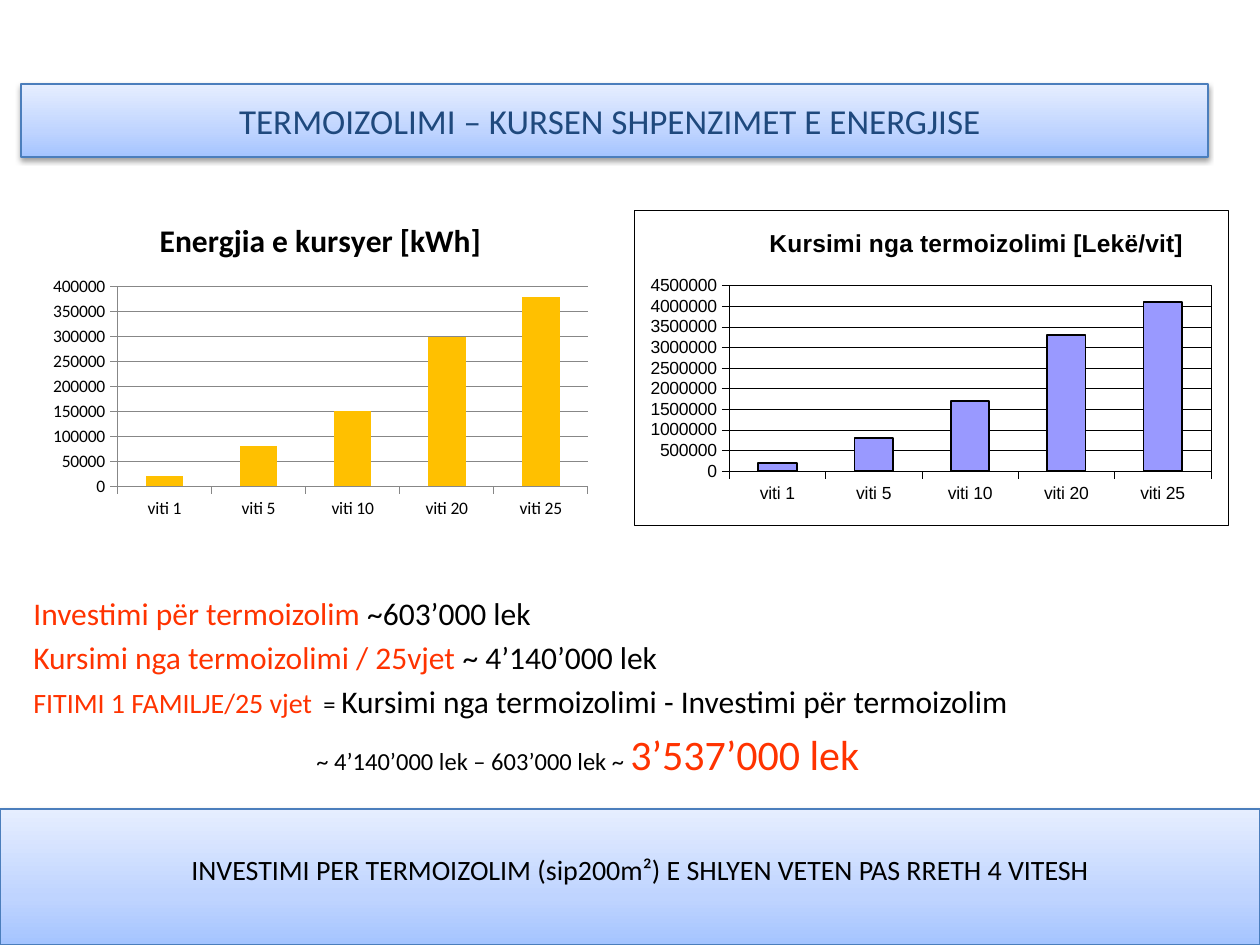
from lxml import etree
from pptx import Presentation
from pptx.chart.data import CategoryChartData
from pptx.dml.color import RGBColor
from pptx.enum.chart import XL_CHART_TYPE as CT, XL_TICK_MARK as TICK
from pptx.enum.shapes import MSO_SHAPE as SHAPE
from pptx.enum.text import MSO_ANCHOR as ANCHOR, PP_ALIGN as ALIGN
from pptx.oxml import parse_xml
from pptx.oxml.ns import nsdecls, qn
from pptx.util import Pt

PX = 914400 // 126
BLACK = RGBColor(0x00, 0x00, 0x00)
WHITE = RGBColor(0xFF, 0xFF, 0xFF)
RED = RGBColor(0xFF, 0x33, 0x00)
NAVY = RGBColor(0x1F, 0x49, 0x7D)
BLUE = RGBColor(0x4B, 0x7E, 0xBC)
GREY = RGBColor(0x87, 0x87, 0x87)
AMBER = RGBColor(0xFF, 0xC0, 0x00)
LILAC = RGBColor(0x99, 0x99, 0xFF)
STOPS = [(0, RGBColor(0xA4, 0xC4, 0xFF)), (35, RGBColor(0xBF, 0xD4, 0xFF)),
         (100, RGBColor(0xE6, 0xEE, 0xFF))]

BANNERS = [
    dict(text="TERMOIZOLIMI – KURSEN SHPENZIMET E ENERGJISE", box=(21, 84, 1187, 73),
         size=20, color=NAVY, anchor=ANCHOR.MIDDLE, margins=dict(margin_right=21)),
    dict(text="INVESTIMI PER TERMOIZOLIM (sip200m²) E SHLYEN VETEN PAS RRETH 4 VITESH",
         box=(0, 809, 1260, 136), size=16, color=BLACK, anchor=ANCHOR.TOP,
         margins=dict(margin_left=33, margin_top=44)),
]
SUMMARY_BOX = (21, 588, 1218, 199)
SUMMARY = [
    (0, 0, [("Investimi për termoizolim", 18, RED), (" ~603’000 lek", 18, BLACK)]),
    (0, 3.6, [("Kursimi nga termoizolimi / 25vjet ", 18, RED), ("~ 4’140’000 lek", 18, BLACK)]),
    (0, 3.6, [("FITIMI 1 FAMILJE/25 vjet", 16, RED), (" ", 14, RED), (" = ", 14, BLACK),
              ("Kursimi nga termoizolimi - Investimi për termoizolim", 18, BLACK)]),
    (283, 4.8, [("~ 4’140’000 lek – 603’000 lek ~ ", 14, BLACK), ("3’537’000 lek", 24, RED)]),
]
YEARS = [f"viti {n}" for n in (1, 5, 10, 20, 25)]
CHARTS = [
    dict(title="Energjia e kursyer [kWh]", series="Energjia e kursyer [kWh]",
         box=(42, 200, 557, 325), values=(20000, 80000, 150000, 300000, 380000),
         font="Calibri", title_size=18, color=AMBER, outline=None,
         axis=(GREY, 0.75), framed=False),
    dict(title="Kursimi nga termoizolimi [Lekë/vit]", series="Series 1",
         box=(634, 210, 595, 315), values=(200000, 800000, 1700000, 3300000, 4100000),
         font="Arial", title_size=14, color=LILAC, outline=(BLACK, 1),
         axis=(BLACK, 0.25), framed=True),
]
TITLE_SPOT = dict(x=0.22, y=0.04)
PLOT_SPOT = dict(x=0.16, y=0.24, w=0.81, h=0.59)


def emu(box):
    """Turn px lengths into EMU."""
    return [v * PX for v in box]


def style(font, **values):
    """Set font attributes and colour."""
    font.color.rgb = values.pop("color")
    for name, value in values.items():
        setattr(font, name, value)


def set_line(line, color, width):
    """Give a line its colour and width in points."""
    line.color.rgb = color
    line.width = Pt(width)


def add_banner(shapes, text, box, size, color, anchor, margins):
    """Add a gradient bar with a soft shadow and centred text."""
    s = shapes.add_shape(SHAPE.RECTANGLE, *emu(box))
    s.shadow.inherit = False
    set_line(s.line, BLUE, 0.75)
    stops = "".join(f'<a:gs pos="{pos * 1000}"><a:srgbClr val="{c}"/></a:gs>' for pos, c in STOPS)
    pr = s._element.spPr
    pr.find(qn("a:prstGeom")).addnext(parse_xml(
        f'<a:gradFill {nsdecls("a")} rotWithShape="1"><a:gsLst>{stops}</a:gsLst>'
        '<a:lin ang="16200000" scaled="0"/></a:gradFill>'))
    pr.find(qn("a:effectLst")).append(parse_xml(
        f'<a:outerShdw {nsdecls("a")} blurRad="{Pt(3.1)}" dist="{Pt(1.6)}" dir="5400000" '
        f'rotWithShape="0"><a:srgbClr val="{BLACK}"><a:alpha val="38000"/></a:srgbClr></a:outerShdw>'))
    tf = s.text_frame
    tf.word_wrap = True
    tf.vertical_anchor = anchor
    for name, value in margins.items():
        setattr(tf, name, value * PX)
    p = tf.paragraphs[0]
    p.alignment = ALIGN.CENTER
    r = p.add_run()
    r.text = text
    style(r.font, name="Calibri", size=Pt(size), color=color)


def add_summary(shapes):
    """Add the savings calculation."""
    tf = shapes.add_textbox(*emu(SUMMARY_BOX)).text_frame
    tf.word_wrap = True
    for i, (indent, before, runs) in enumerate(SUMMARY):
        p = tf.add_paragraph() if i else tf.paragraphs[0]
        p.space_before = Pt(before)
        p._p.get_or_add_pPr().set("marL", str(indent * PX))
        for text, size, color in runs:
            r = p.add_run()
            r.text = text
            style(r.font, name="Calibri", size=Pt(size), color=color)


def make_layout(spot, inner=False):
    """Return a manual chart layout."""
    layout = parse_xml(f'<c:layout {nsdecls("c")}><c:manualLayout/></c:layout>')
    items = [("layoutTarget", "inner")] if inner else []
    items += [("xMode", "edge"), ("yMode", "edge"), *spot.items()]
    for tag, value in items:
        etree.SubElement(layout[0], qn(f"c:{tag}")).set("val", str(value))
    return layout


def make_frame():
    """Return a white fill with a thin black border."""
    return parse_xml(
        f'<c:spPr {nsdecls("c", "a")}><a:solidFill><a:srgbClr val="{WHITE}"/></a:solidFill>'
        f'<a:ln w="{Pt(0.25)}"><a:solidFill><a:srgbClr val="{BLACK}"/></a:solidFill></a:ln></c:spPr>')


def frame_chart(chart):
    """Frame the chart and place its title and plot area."""
    inner = chart.element.find(qn("c:chart"))
    inner.addnext(make_frame())
    plot_area = inner.find(qn("c:plotArea"))
    plot_area.append(make_frame())
    title = inner.find(qn("c:title"))
    for parent in (plot_area, title):
        for old in parent.findall(qn("c:layout")):
            parent.remove(old)
    plot_area.insert(0, make_layout(PLOT_SPOT, True))
    title.find(qn("c:tx")).addnext(make_layout(TITLE_SPOT))


def add_column_chart(shapes, title, series, box, values, font, title_size,
                     color, outline, axis, framed):
    """Add a column chart of savings by year."""
    data = CategoryChartData()
    data.categories = YEARS
    data.add_series(series, values)
    chart = shapes.add_chart(CT.COLUMN_CLUSTERED, *emu(box), data).chart
    chart.has_legend = False
    style(chart.font, name=font, size=Pt(10), color=BLACK)
    chart.has_title = True
    r = chart.chart_title.text_frame.paragraphs[0].add_run()
    r.text = title
    style(r.font, name=font, size=Pt(title_size), bold=True, color=BLACK)
    chart.chart_title.include_in_layout = False
    plot = chart.plots[0]
    plot.gap_width = 150
    plot.vary_by_categories = False
    fmt = plot.series[0].format
    fmt.fill.solid()
    fmt.fill.fore_color.rgb = color
    if outline:
        set_line(fmt.line, *outline)
    for ax in (chart.category_axis, chart.value_axis):
        ax.major_tick_mark = TICK.OUTSIDE
        ax.minor_tick_mark = TICK.NONE
        set_line(ax.format.line, *axis)
    chart.value_axis.has_major_gridlines = True
    set_line(chart.value_axis.major_gridlines.format.line, *axis)
    if framed:
        frame_chart(chart)


def main():
    """Build the slide."""
    prs = Presentation()
    prs.slide_width, prs.slide_height = emu((1260, 945))
    shapes = prs.slides.add_slide(prs.slide_layouts[6]).shapes
    add_summary(shapes)
    for banner in BANNERS:
        add_banner(shapes, **banner)
    for chart in CHARTS:
        add_column_chart(shapes, **chart)
    prs.save("out.pptx")


if __name__ == "__main__":
    main()
